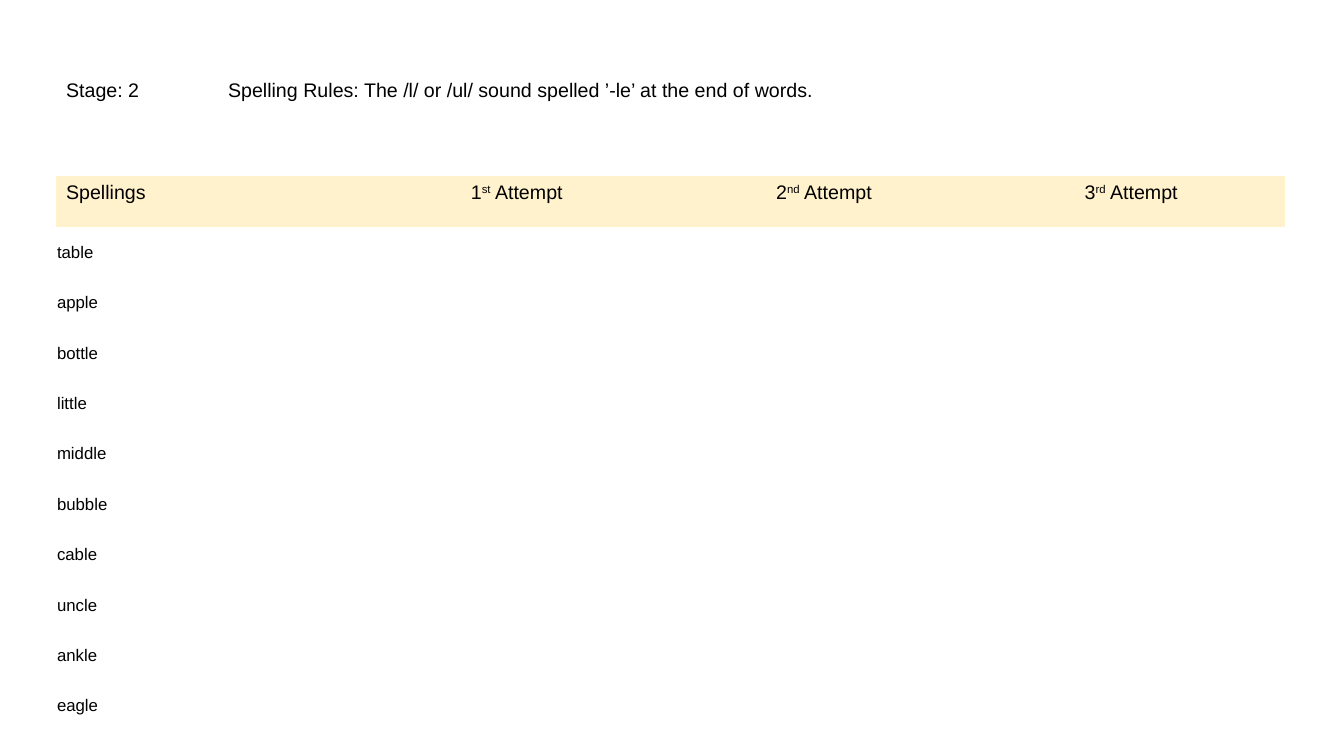
from dataclasses import dataclass

from pptx import Presentation
from pptx.dml.color import RGBColor
from pptx.enum.text import MSO_ANCHOR, PP_ALIGN
from pptx.util import Pt

LEFT, CENTER = PP_ALIGN.LEFT, PP_ALIGN.CENTER
MIDDLE = MSO_ANCHOR.MIDDLE
PLAIN = "{2D5ABB26-0587-4C30-8999-92F81FD0307C}"


@dataclass(frozen=True)
class Theme:
    font: str = "Arial"
    ink: RGBColor = RGBColor(0, 0, 0)
    band: RGBColor = RGBColor(0xFF, 0xF2, 0xCC)
    head: Pt = Pt(14)
    word: Pt = Pt(12)


THEME = Theme()
STAGE = "Stage: 2"
RULE = "Spelling Rules: The /l/ or /ul/ sound spelled ’-le’ at the end of words."
TRIES = [("1", "st"), ("2", "nd"), ("3", "rd")]
WORDS = ["table", "apple", "bottle", "little", "middle",
         "bubble", "cable", "uncle", "ankle", "eagle"]


def add_grid(slide, left, top, widths, high, count):
    frame = slide.shapes.add_table(
        count, len(widths), left, top, sum(widths), high * count)
    grid = frame.table
    grid.first_row = grid.horz_banding = False
    grid._tbl.tblPr.find("{*}tableStyleId").text = PLAIN
    for col, width in zip(grid.columns, widths):
        col.width = width
    for row in grid.rows:
        row.height = high
    for cell in grid.iter_cells():
        cell.fill.background()
    return grid


def style(cell, size, align=LEFT):
    para = cell.text_frame.paragraphs[0]
    para.alignment = align
    para.font.name = THEME.font
    para.font.size = size
    para.font.color.rgb = THEME.ink
    return para


def write(cell, text, size):
    style(cell, size).add_run().text = text


def write_try(cell, num, mark):
    para = style(cell, THEME.head, CENTER)
    for text in (num, mark, " Attempt"):
        run = para.add_run()
        run.text = text
        if text == mark:
            run.font._element.set("baseline", "30000")


def write_word(cell, word):
    cell.vertical_anchor = MIDDLE
    cell.margin_left = cell.margin_right = cell.margin_top = Pt(0.75)
    cell.margin_bottom = 0
    write(cell, word, THEME.word)


def add_words(slide):
    widths = [Pt(219.45)] * (len(TRIES) + 1)
    grid = add_grid(slide, Pt(40), Pt(126), widths, Pt(36), len(WORDS) + 1)
    write(grid.cell(0, 0), "Spellings", THEME.head)
    for col, (num, mark) in enumerate(TRIES, 1):
        write_try(grid.cell(0, col), num, mark)
    for cell in grid.rows[0].cells:
        cell.fill.solid()
        cell.fill.fore_color.rgb = THEME.band
    for row, word in enumerate(WORDS, 1):
        write_word(grid.cell(row, 0), word)


def add_rule(slide):
    grid = add_grid(slide, Pt(40), Pt(53.3), [Pt(115.7), Pt(783)], Pt(31.7), 1)
    for col, text in enumerate((STAGE, RULE)):
        write(grid.cell(0, col), text, THEME.head)


def main():
    deck = Presentation()
    deck.slide_width, deck.slide_height = Pt(960), Pt(540)
    slide = deck.slides.add_slide(deck.slide_layouts[6])
    add_words(slide)
    add_rule(slide)
    deck.save("out.pptx")


if __name__ == "__main__":
    main()
